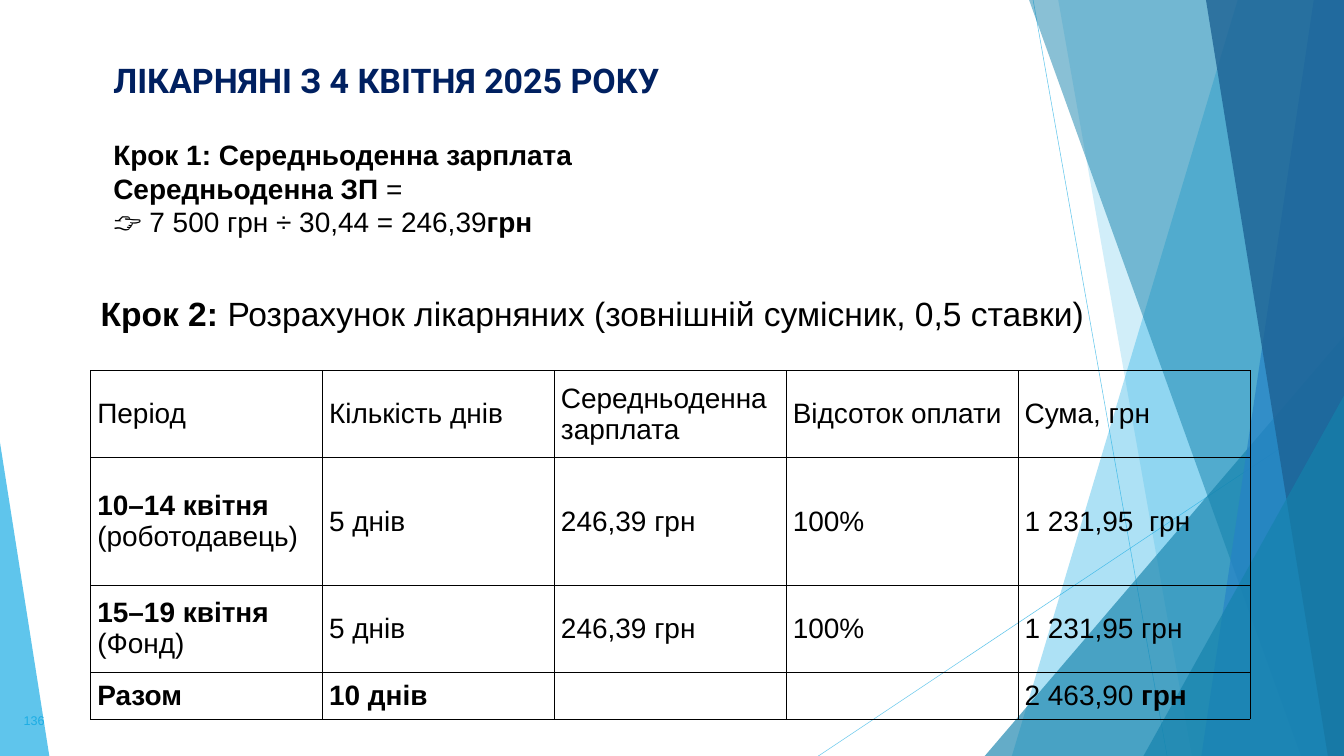
"""Build the sick-pay calculation slide with its faceted blue backdrop."""
from dataclasses import dataclass

from lxml.etree import SubElement
from pptx import Presentation
from pptx.dml.color import RGBColor
from pptx.enum.shapes import MSO_CONNECTOR, MSO_SHAPE
from pptx.enum.text import MSO_ANCHOR
from pptx.oxml import parse_xml
from pptx.oxml.ns import nsdecls, qn
from pptx.util import Inches, Pt


@dataclass(frozen=True)
class Theme:
    sky: str = "1CADE4"
    teal: str = "1482AC"
    azure: str = "2683C6"
    navy: str = "1D6294"
    heading: str = "002060"
    ink: str = "000000"
    font: str = "Arial"
    heading_font: str = "Roboto"
    heading_size: float = 48.5
    step_size: float = 48
    body_size: float = 40
    number_size: float = 18
    hairline: float = 0.75
    border: float = 1


THEME = Theme()
WIDTH, HEIGHT = Inches(26.67), Inches(15)

TITLE = [[("ЛІКАРНЯНІ З 4 КВІТНЯ 2025 РОКУ", True)]]
STEP_ONE = [
    [("Крок 1: Середньоденна зарплата", True)],
    [("Середньоденна ЗП", True), (" =", False), ("\n", False),
     ("👉 7 500 грн ÷ 30,44 = 246,39", False), ("грн", True)],
]
STEP_TWO = [[("Крок 2: ", True),
             ("Розрахунок лікарняних (зовнішній сумісник, 0,5 ставки)", False)]]
PAGE_NUMBER = [[("136", False)]]

DAYS, RATE, SHARE = [("5 днів", False)], [("246,39 грн", False)], [("100%", False)]
TABLE = [
    [[(label, False)] for label in ("Період", "Кількість днів", "Середньоденна зарплата",
                                    "Відсоток оплати", "Сума, грн")],
    [[("10–14 квітня", True), (" (роботодавець)", False)], DAYS, RATE, SHARE,
     [("1 231,95  грн", False)]],
    [[("15–19 квітня", True), (" (Фонд)", False)], DAYS, RATE, SHARE,
     [("1 231,95 грн", False)]],
    [[("Разом", True)], [("10 днів", True)], [], [],
     [("2 463,90", False), (" грн", True)]],
]
TABLE_ORIGIN = (6.75, 49)
COLUMN_SHARE = 17.25
ROW_SHARES = [11.53, 16.87, 11.53, 6.2]

RAYS = [(76.87, 0, 86.84, 100), (100, 53.67, 60.89, 100)]
BACKDROP = [
    ("band", (92.09, 75.29), THEME.sky, 36),
    ("band", (78.74, 88.68), THEME.sky, 20),
    ("triangle", (73.27, 44.47, 26.73, 1), THEME.teal, 66),
    ("band", (76.57, 96.81), THEME.teal, 50),
    ("band", (97.75, 89.39), THEME.azure, 70),
    ("band", (89.73, 98.8), THEME.navy, 80),
    ("triangle", (85.08, 52.33, 14.92, 1), THEME.teal, 66),
    ("triangle", (0, 58.53, 3.67, 0), THEME.sky, 70),
]
TEXTS = [
    (PAGE_NUMBER, (1.39, 92.67, 4.31, 5.33), THEME.font, THEME.number_size,
     THEME.sky, MSO_ANCHOR.MIDDLE),
    (TITLE, (8.06, 7.53, 83.84, 12.6), THEME.heading_font, THEME.heading_size,
     THEME.heading, MSO_ANCHOR.TOP),
    (STEP_ONE, (8.06, 17.87, 84.93, 24.73), THEME.font, THEME.body_size,
     THEME.ink, MSO_ANCHOR.TOP),
    (STEP_TWO, (7.12, 38.4, 75, 9), THEME.font, THEME.step_size,
     THEME.ink, MSO_ANCHOR.TOP),
]


def across(percent):
    return round(WIDTH * percent / 100)


def down(percent):
    return round(HEIGHT * percent / 100)


def set_opacity(fill, percent):
    color = fill._xPr.find(qn("a:solidFill"))[0]
    SubElement(color, qn("a:alpha"), val=str(percent * 1000))


def write_runs(paragraph, runs, font, size, color):
    for text, bold in runs:
        if text == "\n":
            paragraph.add_line_break()
            continue
        run = paragraph.add_run()
        run.text = text
        run.font.name, run.font.size, run.font.bold = font, Pt(size), bold
        run.font.color.rgb = RGBColor.from_string(color)


def add_ray(slide, start_x, start_y, end_x, end_y):
    connector = slide.shapes.add_connector(
        MSO_CONNECTOR.STRAIGHT, across(start_x), down(start_y), across(end_x), down(end_y))
    connector.line.color.rgb = RGBColor.from_string(THEME.sky)
    connector.line.width = Pt(THEME.hairline)
    set_opacity(connector.line.fill, 70)
    SubElement(connector._element.spPr, qn("a:effectLst"))


def add_band(slide, top, bottom):
    builder = slide.shapes.build_freeform(across(top), 0)
    builder.add_line_segments(
        [(WIDTH, 0), (WIDTH, HEIGHT), (across(bottom), HEIGHT)], close=True)
    return builder.convert_to_shape()


def add_triangle(slide, left, top, width, apex):
    shape = slide.shapes.add_shape(MSO_SHAPE.ISOSCELES_TRIANGLE, across(left), down(top),
                                   across(width), HEIGHT - down(top))
    shape.adjustments[0] = apex
    return shape


def add_backdrop(slide):
    for ray in RAYS:
        add_ray(slide, *ray)
    builders = {"band": add_band, "triangle": add_triangle}
    for kind, geometry, color, opacity in BACKDROP:
        shape = builders[kind](slide, *geometry)
        shape.shadow.inherit = False
        shape.line.fill.background()
        shape.fill.solid()
        shape.fill.fore_color.rgb = RGBColor.from_string(color)
        set_opacity(shape.fill, opacity)


def add_text(slide, paragraphs, place, font, size, color, anchor):
    left, top, width, height = place
    frame = slide.shapes.add_textbox(
        across(left), down(top), across(width), down(height)).text_frame
    frame.word_wrap = True
    frame.vertical_anchor = anchor
    for index, runs in enumerate(paragraphs):
        paragraph = frame.add_paragraph() if index else frame.paragraphs[0]
        write_runs(paragraph, runs, font, size, color)


def style_cell(cell):
    cell.vertical_anchor = MSO_ANCHOR.MIDDLE
    cell.margin_left = cell.margin_right = Inches(0.13)
    cell.margin_top = cell.margin_bottom = Inches(0.07)
    cell.fill.background()
    for index, side in enumerate(("lnL", "lnR", "lnT", "lnB")):
        border = parse_xml(
            f'<a:{side} {nsdecls("a")} w="{Pt(THEME.border)}"><a:solidFill>'
            f'<a:srgbClr val="{THEME.ink}"/></a:solidFill></a:{side}>')
        cell._tc.get_or_add_tcPr().insert(index, border)


def add_payment_table(slide):
    left, top = TABLE_ORIGIN
    columns = len(TABLE[0])
    table = slide.shapes.add_table(
        len(TABLE), columns, across(left), down(top),
        across(COLUMN_SHARE * columns), down(sum(ROW_SHARES))).table
    table.first_row = table.horz_banding = False
    for column in table.columns:
        column.width = across(COLUMN_SHARE)
    for row, share, contents in zip(table.rows, ROW_SHARES, TABLE):
        row.height = down(share)
        for cell, runs in zip(row.cells, contents):
            style_cell(cell)
            write_runs(cell.text_frame.paragraphs[0], runs,
                       THEME.font, THEME.body_size, THEME.ink)


def main():
    presentation = Presentation()
    presentation.slide_width, presentation.slide_height = WIDTH, HEIGHT
    slide = presentation.slides.add_slide(presentation.slide_layouts[6])
    add_backdrop(slide)
    for text in TEXTS:
        add_text(slide, *text)
    add_payment_table(slide)
    presentation.save("out.pptx")


if __name__ == "__main__":
    main()
